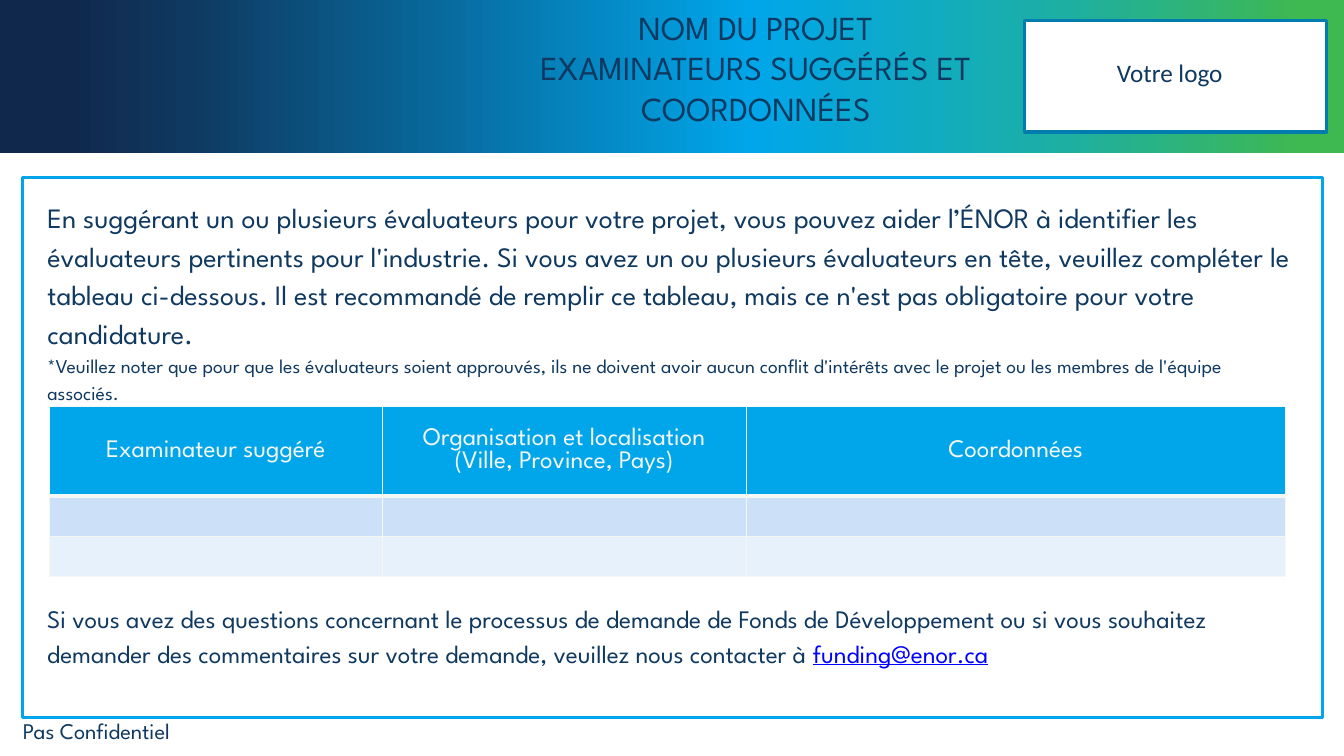
from lxml import etree
from pptx import Presentation
from pptx.dml.color import RGBColor
from pptx.enum import shapes, text
from pptx.oxml import ns, xmlchemy
from pptx.util import Inches, Pt

NAVY = RGBColor(0x0F, 0x39, 0x60)
MIDNIGHT = RGBColor(0x10, 0x28, 0x4C)
SKY = RGBColor(0x00, 0xA6, 0xE9)
TEAL = RGBColor(0x1D, 0xAF, 0xA4)
GREEN = RGBColor(0x3E, 0xB8, 0x51)
OCEAN = RGBColor(0x00, 0x7C, 0xAF)
LINK = RGBColor(0x00, 0x00, 0xFF)
WHITE = RGBColor(0xFF, 0xFF, 0xFF)
OFF_WHITE = RGBColor(0xF5, 0xF7, 0xF3)
ROW_FILLS = [SKY, RGBColor(0xCC, 0xE1, 0xF7), RGBColor(0xE7, 0xF1, 0xFB)]
BANNER_STOPS = [(5, MIDNIGHT), (14, NAVY), (56, SKY), (79, TEAL), (97, GREEN)]
FONT = "League Spartan"
HEADERS = [
    "Examinateur suggéré",
    "Organisation et localisation\n(Ville, Province, Pays)",
    "Coordonnées",
]
INTRO = (
    "En suggérant un ou plusieurs évaluateurs pour votre projet, vous pouvez aider "
    "l’ÉNOR à identifier les évaluateurs pertinents pour l'industrie. Si vous avez un "
    "ou plusieurs évaluateurs en tête, veuillez compléter le tableau ci-dessous. Il est "
    "recommandé de remplir ce tableau, mais ce n'est pas obligatoire pour votre candidature."
)
NOTE = (
    "*Veuillez noter que pour que les évaluateurs soient approuvés, ils ne doivent avoir "
    "aucun conflit d'intérêts avec le projet ou les membres de l'équipe associés."
)
QUESTIONS = (
    "Si vous avez des questions concernant le processus de demande de Fonds de "
    "Développement ou si vous souhaitez demander des commentaires sur votre demande, "
    "veuillez nous contacter à "
)


def place(shape, left, top, width, height):
    """Move a shape to a box given in inches."""
    shape.left, shape.top = Inches(left), Inches(top)
    shape.width, shape.height = Inches(width), Inches(height)


def style(para, size, color=NAVY, name=FONT, align=None, spacing=None):
    """Format a paragraph and all its runs."""
    para.alignment = align
    para.line_spacing = spacing
    for span in para.runs:
        span.font.size, span.font.name = Pt(size), name
        span.font.color.rgb = color


def add_rectangle(page, left, top, width, height, line=None):
    """Add a flat rectangle with no fill and an optional outline."""
    box = page.shapes.add_shape(
        shapes.MSO_SHAPE.RECTANGLE, Inches(left), Inches(top), Inches(width), Inches(height)
    )
    box.shadow.inherit = False
    box.fill.background()
    if line is None:
        box.line.fill.background()
    else:
        box.line.color.rgb, box.line.width = line, Pt(2.25)
    return box


def add_label(page, left, top, width, height, words, size, name=FONT):
    """Add a one-line text box."""
    label = page.shapes.add_textbox(Inches(left), Inches(top), Inches(width), Inches(height))
    label.text_frame.text = words
    style(label.text_frame.paragraphs[0], size, name=name)
    return label


def add_banner(page, left, top, width, height):
    """Add the gradient band behind the title."""
    band = add_rectangle(page, left, top, width, height)
    band.fill.gradient()
    band.fill.gradient_angle = 0
    stops = band.element.spPr.find(".//" + ns.qn("a:gsLst"))
    for stop in list(stops):
        stops.remove(stop)
    for percent, color in BANNER_STOPS:
        stop = etree.SubElement(stops, ns.qn("a:gs"), pos=str(percent * 1000))
        etree.SubElement(stop, ns.qn("a:srgbClr"), val=str(color))
    band.element.getparent().insert(2, band.element)


def fill_title(page, left, top, width, height):
    """Place the two-part heading in the title placeholder."""
    title = page.shapes.title
    place(title, left, top, width, height)
    frame = title.text_frame
    frame.text = "NOM DU PROJET\nEXAMINATEURS SUGGÉRÉS ET COORDONNÉES"
    frame.auto_size, frame.vertical_anchor = text.MSO_AUTO_SIZE.NONE, text.MSO_ANCHOR.TOP
    for para in frame.paragraphs:
        style(para, 24, align=text.PP_ALIGN.CENTER)


def add_logo_slot(page, left, top, width, height):
    """Add the white box reserved for the applicant's logo."""
    slot = add_rectangle(page, left, top, width, height, OCEAN)
    slot.fill.solid()
    slot.fill.fore_color.rgb = WHITE
    label = add_label(page, left + 0.82, top + 0.32, 1.26, 0.4, "Votre logo", 18, "Calibri")
    label.text_frame.word_wrap = False


def fill_intro(page, left, top, width, height):
    """Place the introduction and its note in the body placeholder."""
    body = page.placeholders[1]
    place(body, left, top, width, height)
    frame = body.text_frame
    frame.text = INTRO + "\n" + NOTE
    frame.auto_size = text.MSO_AUTO_SIZE.NONE
    for para, size in zip(frame.paragraphs, (20, 14)):
        properties = para._p.get_or_add_pPr()
        properties.set("marL", "0")
        properties.set("indent", "0")
        etree.SubElement(properties, ns.qn("a:buNone"))
        para.space_before = Pt(0)
        style(para, size, spacing=1.15)


def add_contact(page, left, top, width, height):
    """Add the closing paragraph with the contact address."""
    label = add_label(page, left, top, width, height, QUESTIONS, 18)
    label.text_frame.word_wrap = True
    para = label.text_frame.paragraphs[0]
    address = para.add_run()
    address.text = "funding@enor.ca"
    style(para, 18, spacing=1.15)
    address.font.color.rgb, address.font.underline = LINK, True


def add_borders(cell, bottom):
    """Draw the four pale borders of a cell."""
    properties = cell._tc.get_or_add_tcPr()
    for side, points in (("L", 1), ("R", 1), ("T", 1), ("B", bottom)):
        line = etree.SubElement(properties, ns.qn("a:ln" + side), w=str(Pt(points)))
        solid = etree.SubElement(line, ns.qn("a:solidFill"))
        etree.SubElement(solid, ns.qn("a:srgbClr"), val=str(OFF_WHITE))


def add_reviewer_table(page, left, top, widths, heights):
    """Add the table of suggested reviewers."""
    table = page.shapes.add_table(
        len(heights), len(widths), Inches(left), Inches(top),
        Inches(sum(widths)), Inches(sum(heights)),
    ).table
    for column, width in zip(table.columns, widths):
        column.width = Inches(width)
    for index, (row, height) in enumerate(zip(table.rows, heights)):
        row.height = Inches(height)
        for cell in row.cells:
            add_borders(cell, 3 if index == 0 else 1)
            cell.fill.solid()
            cell.fill.fore_color.rgb = ROW_FILLS[index]
    for cell, words in zip(table.rows[0].cells, HEADERS):
        cell.text_frame.text = words
        cell.vertical_anchor = text.MSO_ANCHOR.MIDDLE
        for para in cell.text_frame.paragraphs:
            style(para, 18, OFF_WHITE, align=text.PP_ALIGN.CENTER)
            para.font.bold = False
            for span in para.runs:
                span.font.bold = False


def main():
    """Build the slide and save the deck."""
    deck = Presentation()
    deck.slide_width, deck.slide_height = Inches(13.33), Inches(7.5)
    page = deck.slides.add_slide(deck.slide_layouts[1])
    add_banner(page, 0, 0, 13.33, 1.52)
    fill_title(page, 5, 0.02, 4.99, 1.31)
    add_logo_slot(page, 10.16, 0.2, 3, 1.11)
    add_rectangle(page, 0.22, 1.76, 12.9, 5.36, SKY)
    fill_intro(page, 0.37, 1.89, 12.6, 2.14)
    add_reviewer_table(page, 0.49, 4.03, [3.3, 3.61, 5.35], [0.89, 0.4, 0.4])
    add_contact(page, 0.37, 5.89, 12.6, 0.8)
    add_label(page, 0.13, 7.07, 2.06, 0.37, "Pas Confidentiel", 16)
    deck.save("out.pptx")


if __name__ == "__main__":
    main()
